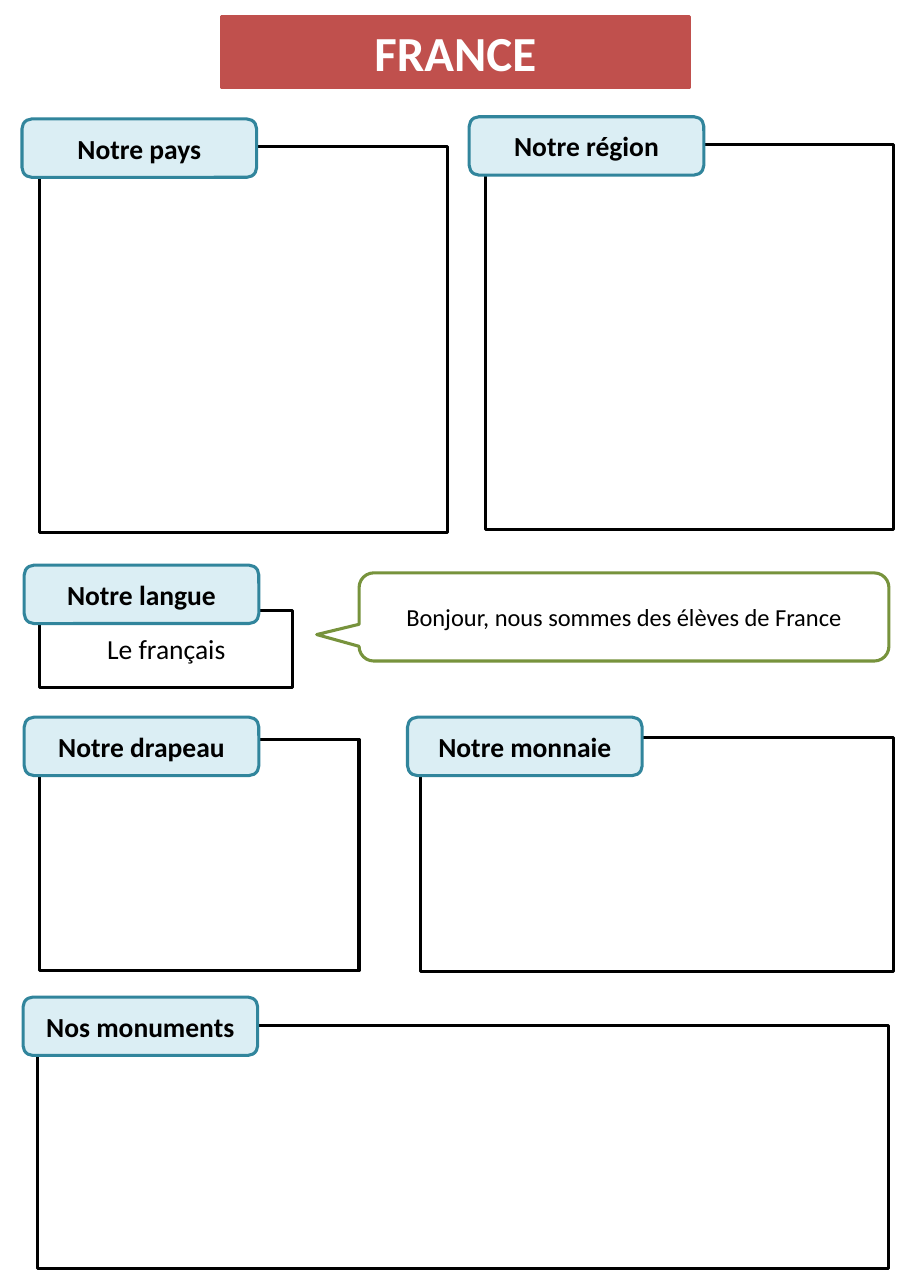
"""Builds a worksheet page presenting a country."""
from dataclasses import dataclass

import pptx
import pptx.dml.color
import pptx.enum.shapes
import pptx.enum.text
import pptx.util

SHAPES = pptx.enum.shapes.MSO_SHAPE


@dataclass(frozen=True)
class Theme:
    """Colours, type sizes and line widths of the page."""
    font: str = "Calibri"
    white: str = "FFFFFF"
    ink: str = "000000"
    banner: str = "C0504D"
    label_fill: str = "DBEEF4"
    label_line: str = "31859C"
    speech_line: str = "77933C"
    title_size: int = 32
    label_size: int = 18
    speech_size: int = 16
    line_width: float = 2
    banner_line_width: float = 2.25


def color(value):
    """Turn a hexadecimal value into a colour."""
    return pptx.dml.color.RGBColor.from_string(value)


def write(shape, text, *, size, ink, font, bold=False):
    """Write one centred line of text in a shape."""
    frame = shape.text_frame
    frame.word_wrap = True
    frame.auto_size = pptx.enum.text.MSO_AUTO_SIZE.NONE
    frame.vertical_anchor = pptx.enum.text.MSO_ANCHOR.MIDDLE
    paragraph = frame.paragraphs[0]
    paragraph.alignment = pptx.enum.text.PP_ALIGN.CENTER
    run = paragraph.add_run()
    run.text = text
    run.font.name = font
    run.font.size = pptx.util.Pt(size)
    run.font.bold = bold
    run.font.color.rgb = color(ink)


class Worksheet:
    """Draws worksheet elements on a grid of tenth-inch columns and rows."""

    cell = pptx.util.Inches(0.1)
    label_width, label_height = 21.3, 5.3

    def __init__(self, presentation, theme):
        """Add a title-only slide to draw on."""
        self.theme = theme
        self.slide = presentation.slides.add_slide(presentation.slide_layouts[5])

    def place(self, *box):
        """Convert columns and rows to slide lengths."""
        return [round(length * self.cell) for length in box]

    def paint(self, shape, fill, line, width):
        """Set the fill and outline of a shape."""
        shape.fill.solid()
        shape.fill.fore_color.rgb = color(fill)
        shape.line.color.rgb = color(line)
        shape.line.width = pptx.util.Pt(width)

    def outline(self, kind, box, fill, line):
        """Add a painted preset shape without a shadow."""
        shape = self.slide.shapes.add_shape(kind, *self.place(*box))
        shape.shadow.inherit = False
        self.paint(shape, fill, line, self.theme.line_width)
        return shape

    def title(self, text, box):
        """Turn the title placeholder into a banner."""
        theme = self.theme
        shape = self.slide.shapes.title
        shape.left, shape.top, shape.width, shape.height = self.place(*box)
        self.paint(shape, theme.banner, theme.banner, theme.banner_line_width)
        write(shape, text, size=theme.title_size, ink=theme.white,
              font=theme.font, bold=True)

    def frame(self, box, text=""):
        """Add a black-edged frame, with text if there is any."""
        theme = self.theme
        shape = self.outline(SHAPES.RECTANGLE, box, theme.white, theme.ink)
        if text:
            write(shape, text, size=theme.label_size, ink=theme.ink, font=theme.font)

    def label(self, text, left, top):
        """Add a rounded heading label."""
        theme = self.theme
        box = (left, top, self.label_width, self.label_height)
        shape = self.outline(SHAPES.ROUNDED_RECTANGLE, box,
                             theme.label_fill, theme.label_line)
        write(shape, text, size=theme.label_size, ink=theme.ink,
              font=theme.font, bold=True)

    def section(self, heading, corner, box, text=""):
        """Add a frame with its heading label on top."""
        self.frame(box, text)
        self.label(heading, *corner)

    def speech(self, text, box, tail):
        """Add a speech bubble with its tail at the given shares of its size."""
        theme = self.theme
        shape = self.outline(SHAPES.ROUNDED_RECTANGULAR_CALLOUT, box,
                             theme.white, theme.speech_line)
        shape.adjustments[0], shape.adjustments[1] = tail
        write(shape, text, size=theme.speech_size, ink=theme.ink, font=theme.font)


def main():
    """Build and save the worksheet."""
    presentation = pptx.Presentation()
    presentation.slide_width = pptx.util.Inches(8.27)
    presentation.slide_height = pptx.util.Inches(11.69)
    sheet = Worksheet(presentation, Theme())
    sheet.title("FRANCE", (20.1, 1.5, 42.5, 6.4))
    sections = [
        ("Notre pays", (2, 10.8), (3.6, 13.3, 37, 35)),
        ("Notre région", (42.6, 10.6), (44.1, 13.1, 37, 35)),
        ("Notre langue", (2.2, 51.3), (3.6, 55.4, 23, 7), "Le français"),
        ("Notre drapeau", (2.2, 65.1), (3.6, 67.1, 29, 21)),
        ("Notre monnaie", (37, 65.1), (38.2, 66.9, 42.9, 21.3)),
        ("Nos monuments", (2.1, 90.5), (3.4, 93.1, 77.3, 22)),
    ]
    for section in sections:
        sheet.section(*section)
    sheet.speech("Bonjour, nous sommes des élèves de France",
                 (32.6, 52, 48.1, 8), tail=(-0.58, 0.2))
    presentation.save("out.pptx")


if __name__ == "__main__":
    main()
